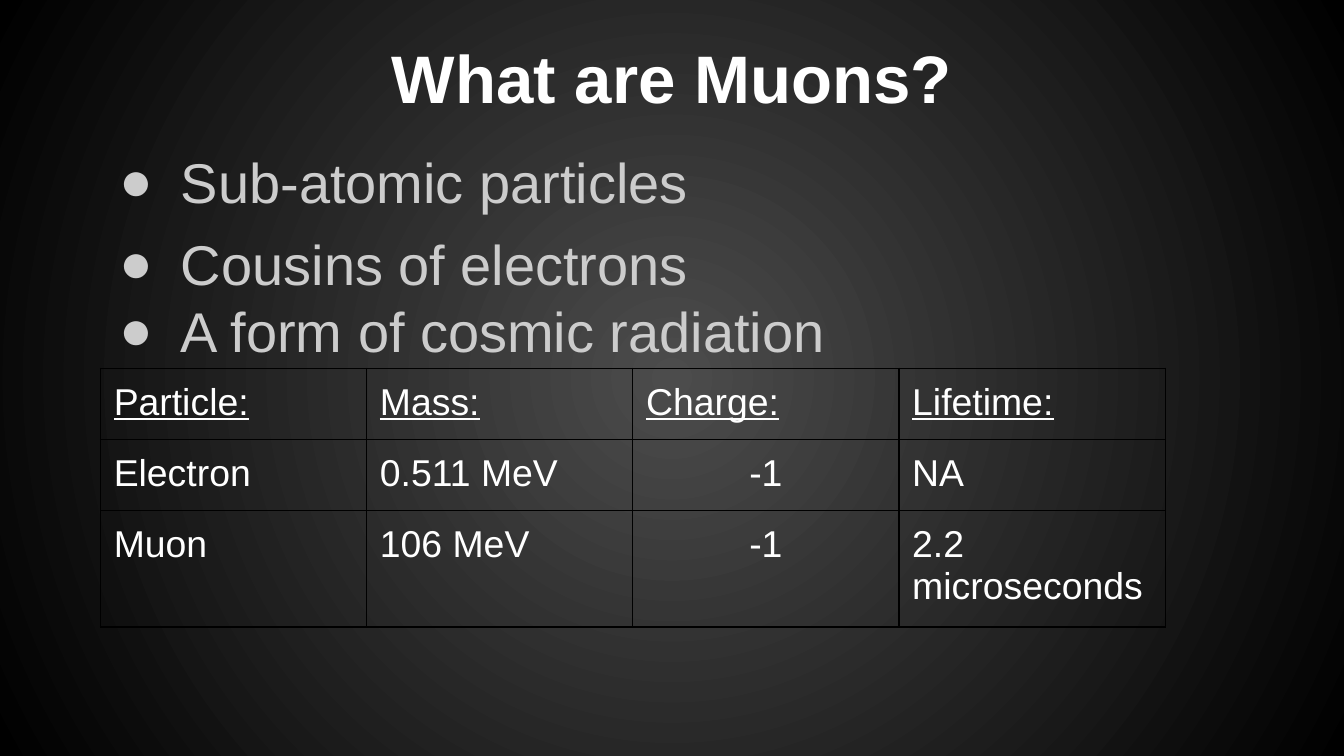
from lxml.etree import SubElement
from pptx import Presentation
from pptx.dml.color import RGBColor
from pptx.enum.text import MSO_ANCHOR, PP_ALIGN
from pptx.oxml import parse_xml
from pptx.oxml.ns import nsdecls, qn
from pptx.util import Cm, Pt

COLORS = {
    "glow": "4C4C4C",
    "edge": "000000",
    "white": "FFFFFF",
    "bullet": "CCCCCC",
}
FONT = "Arial"
INSET = Cm(0.25)
BULLETS = [
    ("Sub-atomic particles", 2.54, 1.55),
    ("Cousins of electrons", 4.09, 1.24),
    ("A form of cosmic radiation", 5.36, 1.19),
]
PARTICLES = [
    ["Particle:", "Mass:", "Charge:", "Lifetime:"],
    ["Electron", "0.511 MeV", "-1", "NA"],
    ["Muon", "106 MeV", "-1", "2.2 microseconds"],
]
CHARGE_COLUMN = 2


def set_font(paragraph, size, color, bold=False, underline=False):
    """Style a whole paragraph."""
    font = paragraph.font
    font.name, font.size = FONT, Pt(size)
    font.bold, font.underline = bold, underline
    font.color.rgb = RGBColor.from_string(COLORS[color])


def set_insets(holder):
    """Give a text frame or table cell equal margins on all sides."""
    holder.margin_left = holder.margin_right = INSET
    holder.margin_top = holder.margin_bottom = INSET


def add_color(parent, color):
    """Append a colour element to an XML parent."""
    SubElement(parent, qn("a:srgbClr"), val=COLORS[color])


def paint_background(slide):
    """Fill the slide with a glow that darkens outwards from the centre."""
    slide.element.cSld.insert(0, parse_xml(
        f'<p:bg {nsdecls("p", "a")}><p:bgPr><a:gradFill><a:gsLst>'
        f'<a:gs pos="0"><a:srgbClr val="{COLORS["glow"]}"/></a:gs>'
        f'<a:gs pos="100000"><a:srgbClr val="{COLORS["edge"]}"/></a:gs>'
        '</a:gsLst><a:path path="circle">'
        '<a:fillToRect l="50000" t="50000" r="50000" b="50000"/>'
        '</a:path></a:gradFill><a:effectLst/></p:bgPr></p:bg>'))


def add_text(slide, text, left, top, width, height):
    """Add a wrapping text box and return its text frame."""
    frame = slide.shapes.add_textbox(left, top, width, height).text_frame
    frame.word_wrap = True
    set_insets(frame)
    frame.text = text
    return frame


def add_title(slide, left, top, width, height):
    """Place the centred heading."""
    heading = add_text(slide, "What are Muons?", left, top, width, height)
    heading.vertical_anchor = MSO_ANCHOR.BOTTOM
    heading.paragraphs[0].alignment = PP_ALIGN.CENTER
    set_font(heading.paragraphs[0], 36, "white", bold=True)


def add_bullet(slide, text, left, top, width, height):
    """Place one bulleted statement."""
    statement = add_text(slide, text, left, top, width, height).paragraphs[0]
    properties = statement._p.get_or_add_pPr()
    properties.set("marL", str(Cm(1.27)))
    properties.set("indent", str(Cm(-1.17)))
    add_color(SubElement(properties, qn("a:buClr")), "bullet")
    SubElement(properties, qn("a:buFont"), typeface=FONT)
    SubElement(properties, qn("a:buChar"), char="●")
    set_font(statement, 30, "bullet")


def add_borders(cell):
    """Draw a thin line on every side of a cell."""
    properties = cell._tc.get_or_add_tcPr()
    for side in ("L", "R", "T", "B"):
        line = SubElement(properties, qn(f"a:ln{side}"), w=str(Pt(0.75)))
        add_color(SubElement(line, qn("a:solidFill")), "edge")


def add_particle_table(slide, left, top, width, height):
    """Place the comparison of electron and muon."""
    table = slide.shapes.add_table(
        len(PARTICLES), len(PARTICLES[0]), left, top, width, height).table
    table.first_row = table.horz_banding = False
    for row, facts in enumerate(PARTICLES):
        for column, fact in enumerate(facts):
            cell = table.cell(row, column)
            cell.text = fact
            set_insets(cell)
            add_borders(cell)
            cell.fill.background()
            paragraph = cell.text_frame.paragraphs[0]
            if row and column == CHARGE_COLUMN:
                paragraph.alignment = PP_ALIGN.CENTER
            set_font(paragraph, 20, "white", underline=row == 0)


def main():
    """Build and save the slide."""
    deck = Presentation()
    deck.slide_width, deck.slide_height = Cm(25.4), Cm(14.29)
    slide = deck.slides.add_slide(deck.slide_layouts[6])
    left, width = Cm(1.9), Cm(21.6)
    paint_background(slide)
    add_title(slide, left, Cm(0.53), width, Cm(1.93))
    add_particle_table(slide, left, Cm(6.96), Cm(20.12), Cm(3.2))
    for text, top, height in BULLETS:
        add_bullet(slide, text, left, Cm(top), width, Cm(height))
    deck.save("out.pptx")


if __name__ == "__main__":
    main()
